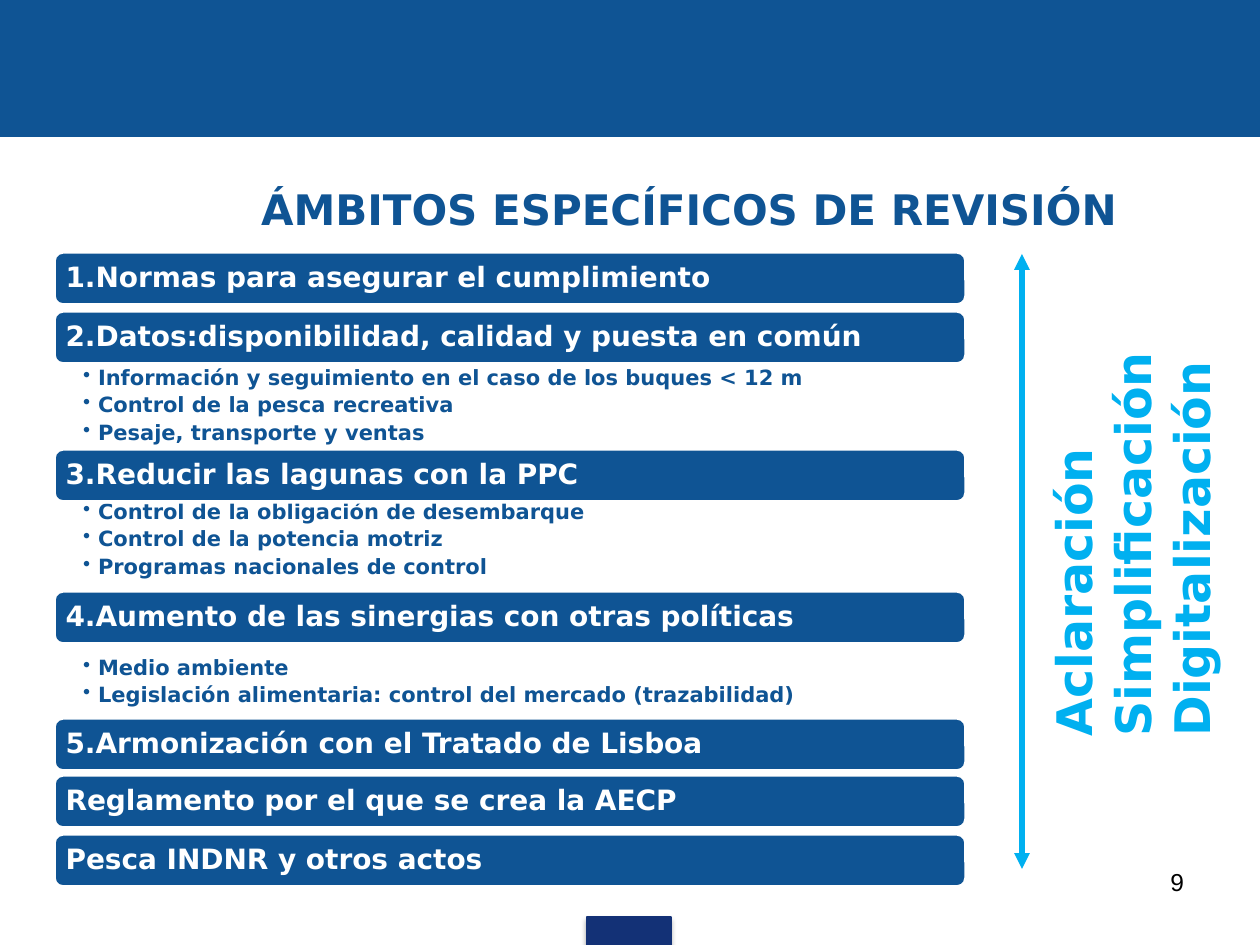
"""Build the slide on the specific areas of revision."""
import pptx
import pptx.util
import pptx.dml.color
import pptx.enum.shapes
import pptx.enum.text
import lxml.etree
from dataclasses import dataclass


@dataclass(frozen=True)
class Theme:
    blue: str = "0F5494"
    navy: str = "133176"
    sky: str = "00B0F0"
    white: str = "FFFFFF"
    black: str = "000000"
    font: str = "DejaVu Sans"
    plain: str = "Arial"
    title: int = 24
    bar: int = 16
    item: int = 12
    side: int = 28
    page: int = 14


theme = Theme()
PX = 914400 / 126
NS = "http://schemas.openxmlformats.org/drawingml/2006/main"
kinds = pptx.enum.shapes.MSO_SHAPE
align = pptx.enum.text.PP_ALIGN
anchor = pptx.enum.text.MSO_ANCHOR
rgb = pptx.dml.color.RGBColor.from_string

deck = pptx.Presentation()
deck.slide_width = round(1260 * PX)
deck.slide_height = round(945 * PX)
slide = deck.slides.add_slide(deck.slide_layouts[6])


def block(kind, box, fill, line, width):
    shape = slide.shapes.add_shape(kind, *[round(n * PX) for n in box])
    shape.shadow.inherit = False
    shape.fill.solid()
    shape.fill.fore_color.rgb = rgb(fill)
    shape.line.color.rgb = rgb(line)
    shape.line.width = pptx.util.Pt(width)
    return shape


def write(shape, text, size, color, pad, mid=False, bold=True, font=theme.font, side=align.LEFT):
    frame = shape.text_frame
    frame.word_wrap = True
    frame.margin_left, frame.margin_top, frame.margin_right, frame.margin_bottom = [
        round(n * PX) for n in pad]
    frame.vertical_anchor = anchor.MIDDLE if mid else anchor.TOP
    frame.text = text
    for para in frame.paragraphs:
        para.alignment = side
        for run in para.runs:
            run.font.name = font
            run.font.size = pptx.util.Pt(size)
            run.font.bold = bold
            run.font.color.rgb = rgb(color)
    return frame


block(kinds.RECTANGLE, (0, 0, 1260, 136), theme.blue, theme.blue, 0.75)
tab = block(kinds.RECTANGLE, (587, 917, 84, 28), theme.navy, theme.navy, 0.75)
glow = lxml.etree.SubElement(
    tab._element.spPr.find(f"{{{NS}}}effectLst"), f"{{{NS}}}outerShdw",
    blurRad="39370", dist="22860", dir="5400000", rotWithShape="0")
tint = lxml.etree.SubElement(glow, f"{{{NS}}}srgbClr", val=theme.black)
lxml.etree.SubElement(tint, f"{{{NS}}}alpha", val="35000")

lists = [
    (364, ["Información y seguimiento en el caso de los buques < 12 m",
           "Control de la pesca recreativa",
           "Pesaje, transporte y ventas"]),
    (498, ["Control de la obligación de desembarque",
           "Control de la potencia motriz",
           "Programas nacionales de control"]),
    (654, ["Medio ambiente",
           "Legislación alimentaria: control del mercado (trazabilidad)"]),
]
for top, items in lists:
    box = slide.shapes.add_textbox(*[round(n * PX) for n in (54, top, 912, 27 * len(items))])
    frame = write(box, "\n".join(items), theme.item, theme.blue, (29, 3, 15, 3))
    for para in frame.paragraphs:
        para.line_spacing = 0.9
        para.space_after = pptx.util.Pt(2.8)
        props = para._p.get_or_add_pPr()
        props.set("marL", str(round(15 * PX)))
        props.set("indent", str(round(-15 * PX)))
        lxml.etree.SubElement(props, f"{{{NS}}}buChar", char="•")

bars = [
    (252, "1.Normas para asegurar el cumplimiento"),
    (311, "2.Datos:disponibilidad, calidad y puesta en común"),
    (449, "3.Reducir las lagunas con la PPC"),
    (591, "4.Aumento de las sinergias con otras políticas"),
    (718, "5.Armonización con el Tratado de Lisboa"),
    (775, "Reglamento por el que se crea la AECP"),
    (834, "Pesca INDNR y otros actos"),
]
for top, text in bars:
    bar = block(kinds.ROUNDED_RECTANGLE, (54, top, 912, 53), theme.blue, theme.white, 2)
    frame = write(bar, text, theme.bar, theme.white, (9, 6, 9, 6), mid=True)
    frame.paragraphs[0].line_spacing = 0.9

head = slide.shapes.add_textbox(*[round(n * PX) for n in (199, 145, 977, 128)])
write(head, "ÁMBITOS ESPECÍFICOS DE REVISIÓN", theme.title, theme.blue, (62, 6, 12, 6), mid=True)

page = slide.shapes.add_textbox(*[round(n * PX) for n in (903, 861, 294, 66)])
write(page, "9", theme.page, theme.black, (13, 6, 13, 6),
      bold=False, font=theme.plain, side=align.RIGHT)

goals = slide.shapes.add_textbox(*[round(n * PX) for n in (919, 441, 427, 190)])
goals.rotation = 270
write(goals, "Aclaración\nSimplificación\nDigitalización", theme.side, theme.sky, (13, 6, 13, 6))

arrow = slide.shapes.add_connector(
    pptx.enum.shapes.MSO_CONNECTOR.STRAIGHT, *[round(n * PX) for n in (1022, 869, 1022, 254)])
arrow.line.color.rgb = rgb(theme.sky)
arrow.line.width = pptx.util.Pt(3)
line = arrow.line._get_or_add_ln()
for end in ("headEnd", "tailEnd"):
    lxml.etree.SubElement(line, f"{{{NS}}}{end}", type="triangle")
lxml.etree.SubElement(arrow._element.spPr, f"{{{NS}}}effectLst")

deck.save("out.pptx")
